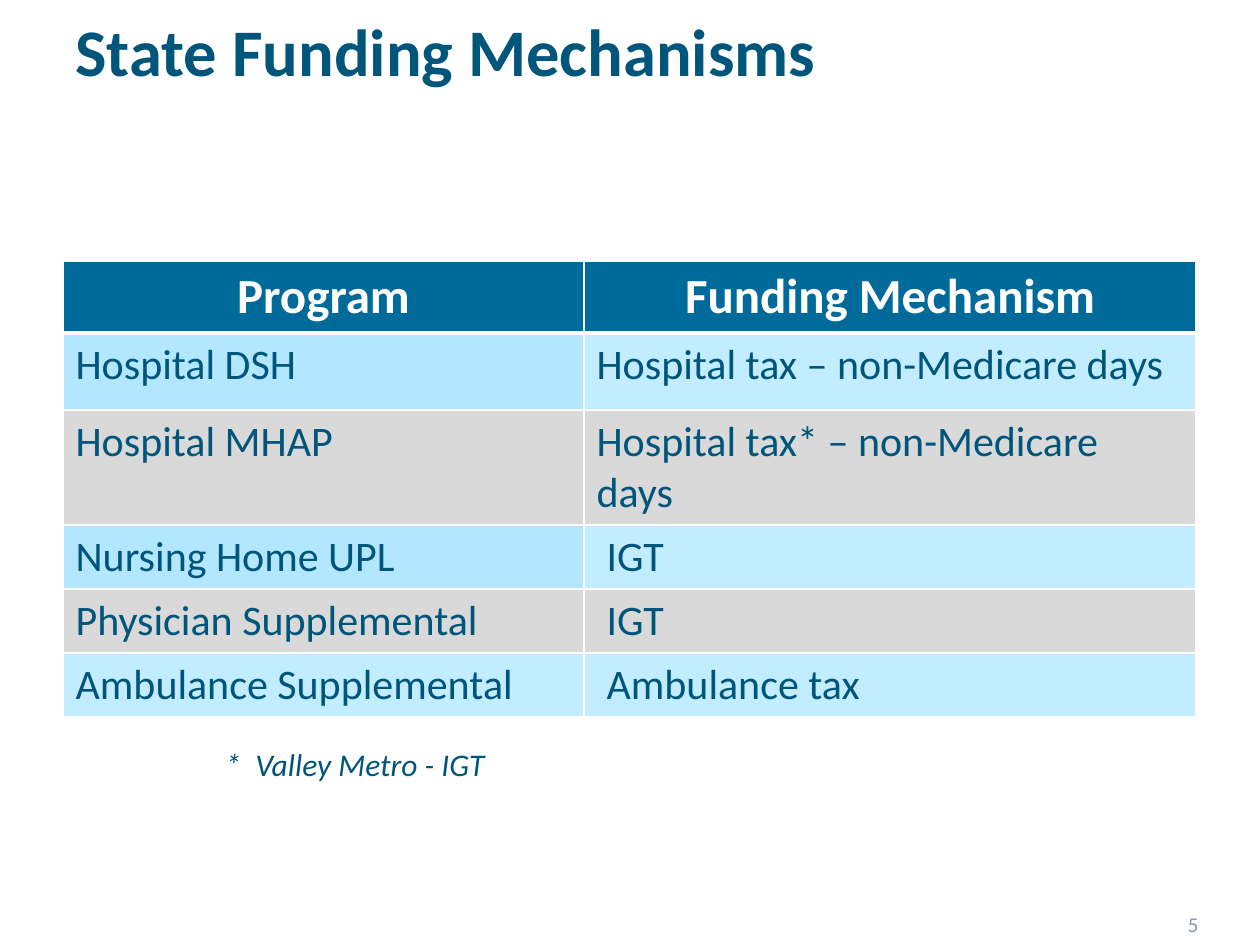
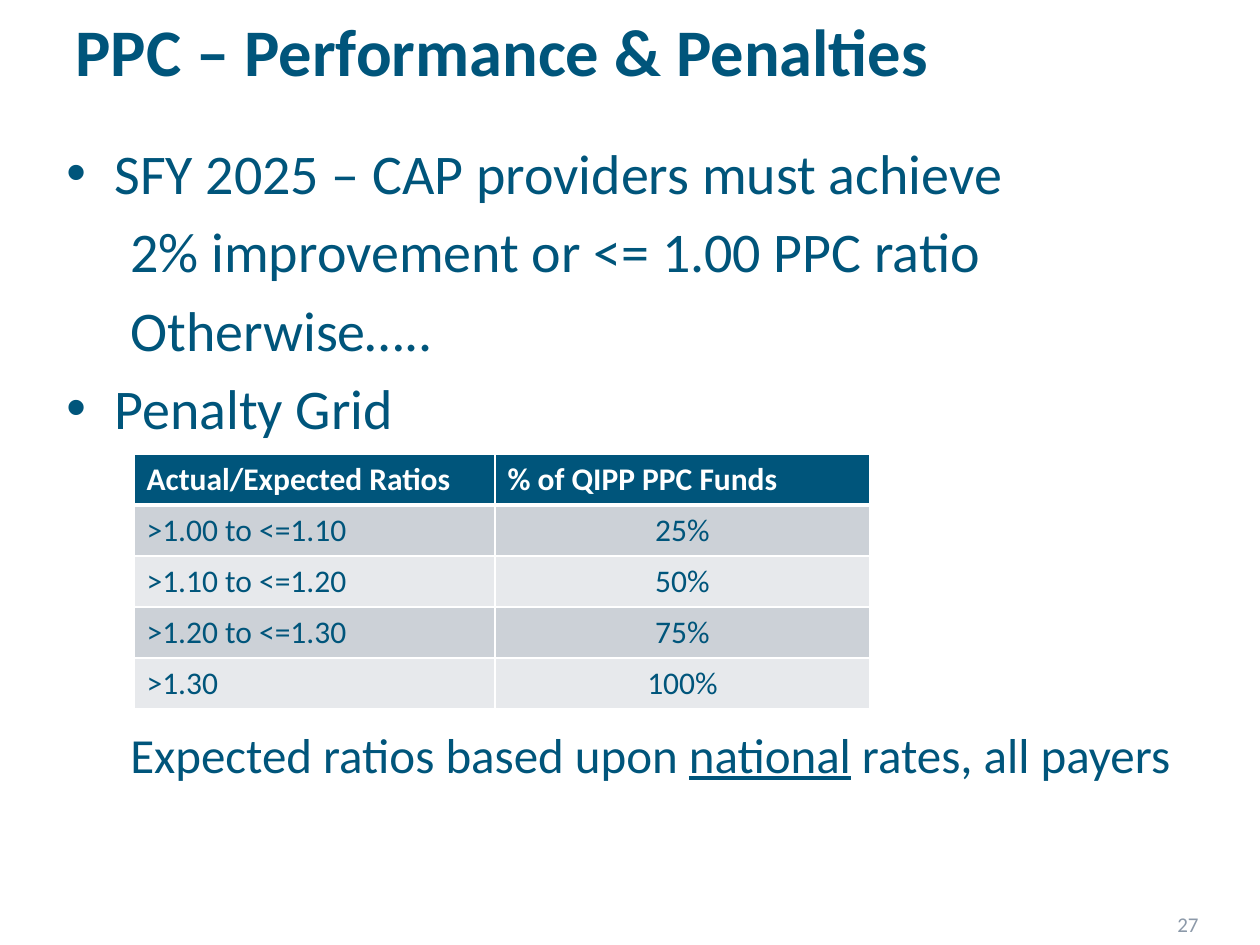
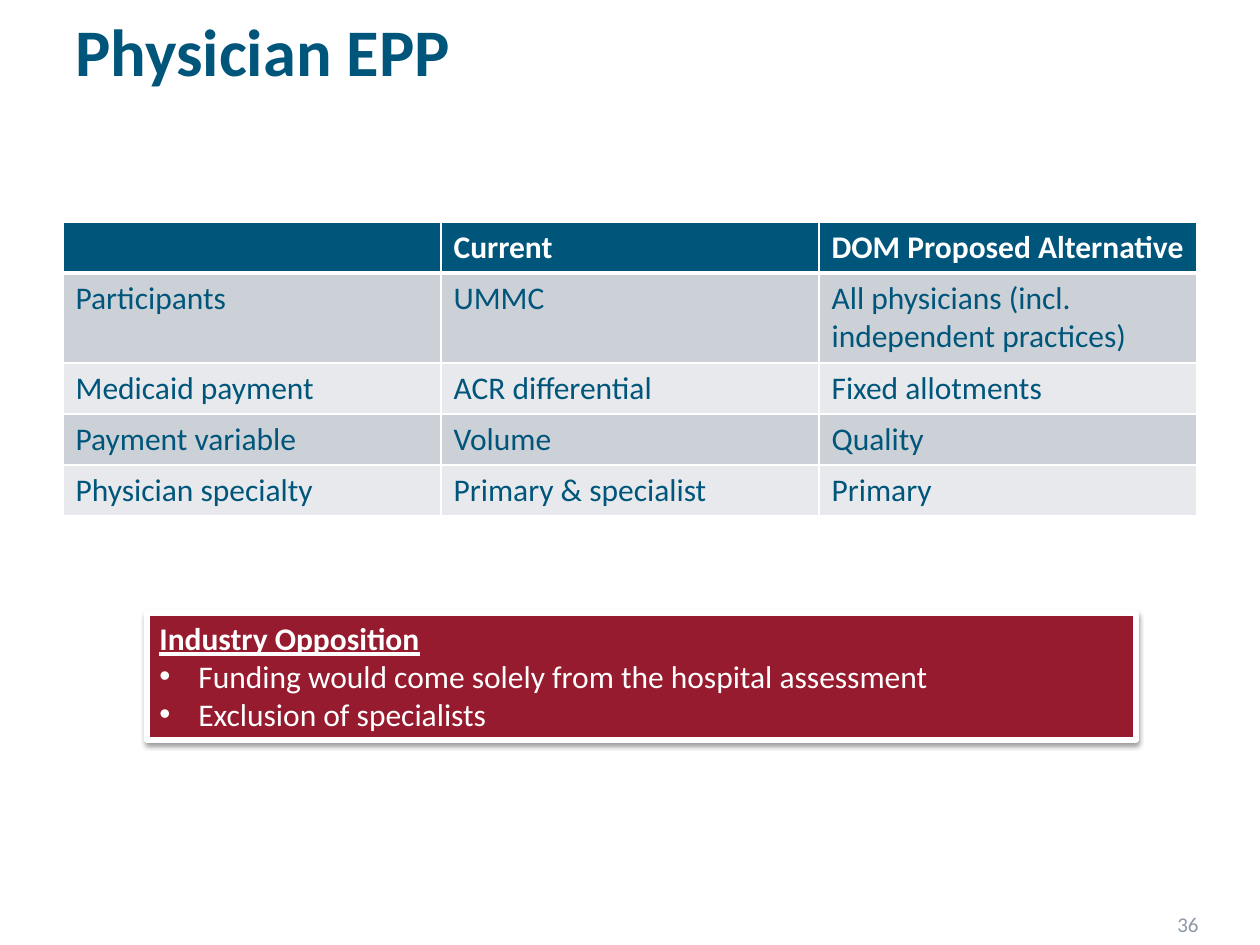
from dataclasses import dataclass
from lxml import etree
from pptx import Presentation
from pptx.dml.color import RGBColor
from pptx.enum.shapes import MSO_SHAPE
from pptx.enum.text import MSO_ANCHOR, PP_ALIGN
from pptx.oxml import parse_xml
from pptx.oxml.ns import nsdecls, qn
from pptx.util import Pt

PX = 914400 / 126
FONT = "Calibri"
NAVY, WHITE, NUMBER_GREY, CRIMSON = "00557B", "FFFFFF", "8C99A9", "971B2F"
HEADER_BLUE, SKY, PALE_SKY, GREY = "006B9B", "B2E7FF", "C2ECFF", "D9D9D9"
BANDS = [("CCD1D7",) * 3, ("E7E9EC",) * 3]


@dataclass
class Line:
    words: str
    size: int = 18
    color: str = NAVY
    bold: bool = False
    italic: bool = False
    underlined: str = ""
    align: PP_ALIGN = PP_ALIGN.LEFT
    indent: int = 0
    hanging: int = 0
    bullet: bool = False
    before: float = 0


def px(length):
    return round(length * PX)


def rgb(value):
    return RGBColor.from_string(value)


def write(frame, lines):
    for index, line in enumerate(lines):
        paragraph = frame.paragraphs[0] if index == 0 else frame.add_paragraph()
        paragraph.alignment = line.align
        paragraph.space_before = Pt(line.before)
        properties = paragraph._p.get_or_add_pPr()
        properties.set("marL", str(px(line.indent)))
        properties.set("indent", str(-px(line.hanging)))
        if line.bullet:
            etree.SubElement(properties, qn("a:buFont")).set("typeface", "Arial")
            etree.SubElement(properties, qn("a:buChar")).set("char", "•")
        pieces = [line.words]
        if line.underlined:
            pieces = line.words.partition(line.underlined)
        for piece in filter(None, pieces):
            run = paragraph.add_run()
            run.text = piece
            font = run.font
            font.name, font.size = FONT, Pt(line.size)
            font.bold, font.italic = line.bold, line.italic
            font.underline = piece == line.underlined
            font.color.rgb = rgb(line.color)


def add_text(slide, box, lines, anchor=MSO_ANCHOR.TOP, wrap=True):
    frame = slide.shapes.add_textbox(*map(px, box)).text_frame
    frame.word_wrap = wrap
    frame.vertical_anchor = anchor
    write(frame, lines)


def add_page(deck, title, number):
    slide = deck.slides.add_slide(deck.slide_layouts[6])
    add_text(slide, (887, 903, 324, 42),
             [Line(str(number), 12, NUMBER_GREY, align=PP_ALIGN.RIGHT)], MSO_ANCHOR.MIDDLE)
    add_text(slide, (63, 0, 1134, 99), [Line(title, 38, bold=True)], MSO_ANCHOR.MIDDLE)
    return slide


def border_cell(cell, bottom):
    properties = cell._tc.get_or_add_tcPr()
    for position, side in enumerate(("lnL", "lnR", "lnT", "lnB")):
        width = Pt(bottom if side == "lnB" else 1)
        properties.insert(position, parse_xml(
            f'<a:{side} {nsdecls("a")} w="{width}"><a:solidFill>'
            f'<a:srgbClr val="{WHITE}"/></a:solidFill></a:{side}>'))


def add_grid(slide, corner, widths, heights, rows, fills):
    grid = slide.shapes.add_table(len(rows), len(widths), *map(
        px, (*corner, sum(widths), sum(heights)))).table
    grid.horz_banding = False
    for column, width in zip(grid.columns, widths):
        column.width = px(width)
    for r, lines in enumerate(rows):
        grid.rows[r].height = px(heights[r])
        for c, line in enumerate(lines):
            cell = grid.cell(r, c)
            cell.fill.solid()
            cell.fill.fore_color.rgb = rgb(fills[r][c])
            border_cell(cell, 3 if r == 0 else 1)
            write(cell.text_frame, [line])


def header(labels, **style):
    return [Line(label, color=WHITE, bold=True, **style) for label in labels]


def add_callout(slide, box, lines):
    callout = slide.shapes.add_shape(MSO_SHAPE.RECTANGLE, *map(px, box))
    callout.fill.solid()
    callout.fill.fore_color.rgb = rgb(CRIMSON)
    callout.line.color.rgb = rgb(WHITE)
    callout.line.width = Pt(3)
    callout.shadow.inherit = False
    callout._element.spPr.find(qn("a:effectLst")).append(parse_xml(
        f'<a:outerShdw {nsdecls("a")} blurRad="{Pt(3.1)}" dist="{Pt(1.6)}" dir="5400000" '
        'rotWithShape="0"><a:srgbClr val="000000"><a:alpha val="38000"/></a:srgbClr>'
        '</a:outerShdw>'))
    callout.text_frame.word_wrap = True
    callout.text_frame.vertical_anchor = MSO_ANCHOR.TOP
    write(callout.text_frame, lines)


def add_funding(deck):
    slide = add_page(deck, "State Funding Mechanisms", 5)
    programs = [
        ("Hospital DSH", "Hospital tax – non-Medicare days", 0),
        ("Hospital MHAP", "Hospital tax* – non-Medicare days", 0),
        ("Nursing Home UPL", "IGT", 10),
        ("Physician Supplemental", "IGT", 10),
        ("Ambulance Supplemental", "Ambulance tax", 10),
    ]
    rows = [header(("Program", "Funding Mechanism"), size=28, align=PP_ALIGN.CENTER)]
    rows += [[Line(program, 24), Line(mechanism, 24, indent=indent)]
             for program, mechanism, indent in programs]
    fills = [(HEADER_BLUE,) * 2, (SKY, PALE_SKY), (GREY,) * 2,
             (SKY, PALE_SKY), (GREY,) * 2, (PALE_SKY,) * 2]
    add_grid(slide, (63, 261), (521, 612), (72, 77, 115, 64, 64, 64), rows, fills)
    add_text(slide, (213, 739, 296, 50),
             [Line("*\tValley Metro - IGT", italic=True, indent=30, hanging=30)], wrap=False)


def add_penalties(deck):
    slide = add_page(deck, "PPC – Performance & Penalties", 27)
    point = dict(size=32, indent=48, hanging=48, bullet=True)
    detail = dict(size=32, indent=64, before=6.4)
    add_text(slide, (54, 132, 1134, 689), [
        Line("SFY 2025 – CAP providers must achieve", **point),
        Line("2% improvement or <= 1.00 PPC ratio", **detail),
        Line("Otherwise…..", **detail),
        Line("Penalty Grid", before=6.4, **point),
        Line("Expected ratios based upon national rates, all payers", 28,
             underlined="national", indent=64, before=162),
    ])
    penalties = [(">1.00 to <=1.10", "25%"), (">1.10 to <=1.20", "50%"),
                 (">1.20 to <=1.30", "75%"), (">1.30", "100%")]
    rows = [header(("Actual/Expected Ratios", "% of QIPP PPC Funds"))]
    rows += [[Line(ratio), Line(share, align=PP_ALIGN.CENTER)] for ratio, share in penalties]
    add_grid(slide, (134, 454), (361, 375), (51,) * 5, rows, [(NAVY,) * 2] + BANDS * 2)


def add_physician(deck):
    slide = add_page(deck, "Physician EPP", 36)
    features = [
        ("Participants", "UMMC", "All physicians (incl. independent practices)"),
        ("Medicaid payment", "ACR differential", "Fixed allotments"),
        ("Payment variable", "Volume", "Quality"),
        ("Physician specialty", "Primary & specialist", "Primary"),
    ]
    rows = [header(("", "Current", "DOM Proposed Alternative"))]
    rows += [[Line(words) for words in feature] for feature in features]
    add_grid(slide, (63, 222), (378,) * 3, (51, 90, 51, 51, 51), rows,
             [(NAVY,) * 3] + BANDS * 2)
    heading = "Industry Opposition"
    objections = ("Funding would come solely from the hospital assessment",
                  "Exclusion of specialists")
    add_callout(slide, (147, 613, 989, 127), [
        Line(heading, color=WHITE, bold=True, underlined=heading),
        *(Line(objection, color=WHITE, indent=39, hanging=39, bullet=True)
          for objection in objections),
    ])


def main():
    deck = Presentation()
    deck.slide_width, deck.slide_height = px(1260), px(945)
    add_funding(deck)
    add_penalties(deck)
    add_physician(deck)
    deck.save("out.pptx")


if __name__ == "__main__":
    main()
